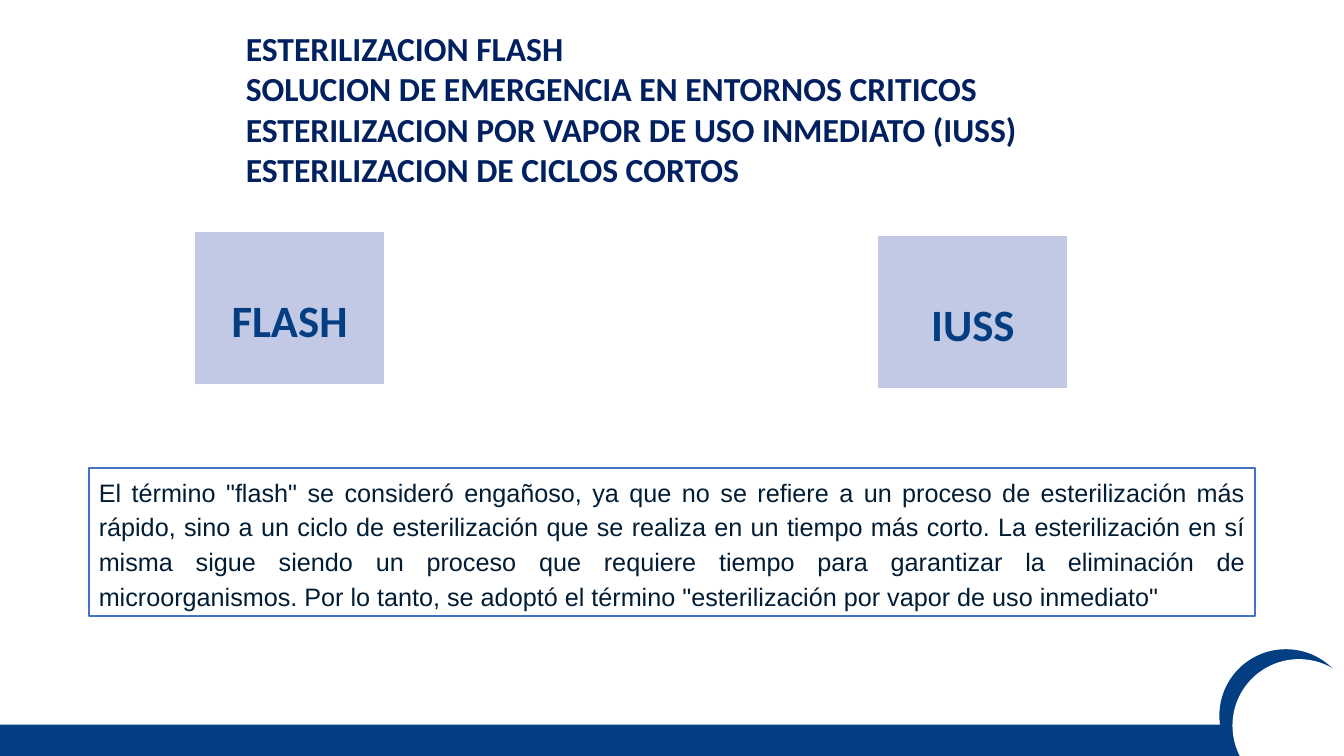
"""Build the slide on flash sterilization and the IUSS term."""
import dataclasses
import typing

import pptx
import pptx.dml.color
import pptx.enum.shapes
import pptx.enum.text
import pptx.util

Cm = pptx.util.Cm
Pt = pptx.util.Pt
Rgb = pptx.dml.color.RGBColor
Kind = pptx.enum.shapes.MSO_SHAPE
Side = pptx.enum.text.PP_ALIGN
Stand = pptx.enum.text.MSO_ANCHOR


@dataclasses.dataclass(frozen=True)
class Theme:
    navy: Rgb = Rgb.from_string("033E82")
    white: Rgb = Rgb.from_string("FFFFFF")
    pale: Rgb = Rgb.from_string("C1C9E4")
    edge: Rgb = Rgb.from_string("4472C4")
    head: Rgb = Rgb.from_string("002060")
    ink: Rgb = Rgb.from_string("001D35")
    sans: str = "Calibri"
    plain: str = "Arial"
    title: int = 24
    label: int = 32
    body: int = 18


@dataclasses.dataclass(frozen=True)
class Style:
    face: str
    size: int
    color: Rgb
    bold: bool
    frame: dict[str, typing.Any]
    para: dict[str, typing.Any]


@dataclasses.dataclass(frozen=True)
class Block:
    kind: Kind
    left: float
    top: float
    width: float
    height: float
    fill: Rgb
    line: Rgb | None = None
    text: str = ""
    style: Style | None = None


THEME = Theme()
TITLE = Style(
    THEME.sans, THEME.title, THEME.head, True,
    {"vertical_anchor": Stand.TOP, "word_wrap": True,
     "auto_size": pptx.enum.text.MSO_AUTO_SIZE.NONE},
    {"alignment": Side.LEFT},
)
LABEL = Style(
    THEME.sans, THEME.label, THEME.navy, True,
    {"vertical_anchor": Stand.MIDDLE, "word_wrap": True, "margin_top": Cm(0.71)},
    {"alignment": Side.CENTER},
)
BODY = Style(
    THEME.plain, THEME.body, THEME.ink, False,
    {"vertical_anchor": Stand.MIDDLE, "word_wrap": True},
    {"alignment": Side.JUSTIFY, "line_spacing": 1.15, "space_after": Pt(8)},
)
HEADS = (
    "ESTERILIZACION FLASH",
    "SOLUCION DE EMERGENCIA EN ENTORNOS CRITICOS",
    "ESTERILIZACION POR VAPOR DE USO INMEDIATO (IUSS)",
    "ESTERILIZACION DE CICLOS CORTOS",
)
NOTE = (
    'El término "flash" se consideró engañoso, ya que no se refiere a un proceso '
    "de esterilización más rápido, sino a un ciclo de esterilización que se realiza "
    "en un tiempo más corto. La esterilización en sí misma sigue siendo un proceso "
    "que requiere tiempo para garantizar la eliminación de microorganismos. Por lo "
    'tanto, se adoptó el término "esterilización por vapor de uso inmediato"'
)
BLOCKS = (
    Block(Kind.RECTANGLE, 0, 18.26, 32.46, 0.79, THEME.navy),
    Block(Kind.OVAL, 30.73, 16.36, 3.35, 3.35, THEME.navy),
    Block(Kind.OVAL, 31.06, 16.61, 3.35, 3.35, THEME.white),
    Block(Kind.RECTANGLE, 4.9, 5.83, 4.8, 3.86, THEME.pale, THEME.white, "FLASH", LABEL),
    Block(Kind.RECTANGLE, 22.12, 5.94, 4.8, 3.86, THEME.pale, THEME.white, "IUSS", LABEL),
    Block(Kind.RECTANGLE, 2.24, 11.79, 29.39, 3.73, THEME.white, THEME.edge, NOTE, BODY),
)


def apply(target: typing.Any, values: dict[str, typing.Any]) -> None:
    for name, value in values.items():
        setattr(target, name, value)


def write(shape: typing.Any, lines: typing.Sequence[str], style: Style) -> None:
    frame = shape.text_frame
    apply(frame, style.frame)
    frame.text = "\n".join(lines)
    for para in frame.paragraphs:
        apply(para, style.para)
        for run in para.runs:
            apply(run.font, {"name": style.face, "size": Pt(style.size), "bold": style.bold})
            run.font.color.rgb = style.color


def draw(slide: typing.Any, block: Block) -> None:
    shape = slide.shapes.add_shape(
        block.kind, Cm(block.left), Cm(block.top), Cm(block.width), Cm(block.height)
    )
    shape.shadow.inherit = False
    shape.fill.solid()
    shape.fill.fore_color.rgb = block.fill
    if block.line is None:
        shape.line.fill.background()
    else:
        shape.line.color.rgb = block.line
        shape.line.width = Pt(1)
    if block.style:
        write(shape, [block.text], block.style)


def main() -> None:
    deck = pptx.Presentation()
    apply(deck, {"slide_width": Cm(33.87), "slide_height": Cm(19.05)})
    slide = deck.slides.add_slide(deck.slide_layouts.get_by_name("Title Only"))
    title = slide.shapes.title
    apply(title, {"left": Cm(5.94), "top": Cm(0.58), "width": Cm(20.98), "height": Cm(4.37)})
    write(title, HEADS, TITLE)
    for block in BLOCKS:
        draw(slide, block)
    deck.save("out.pptx")


if __name__ == "__main__":
    main()
